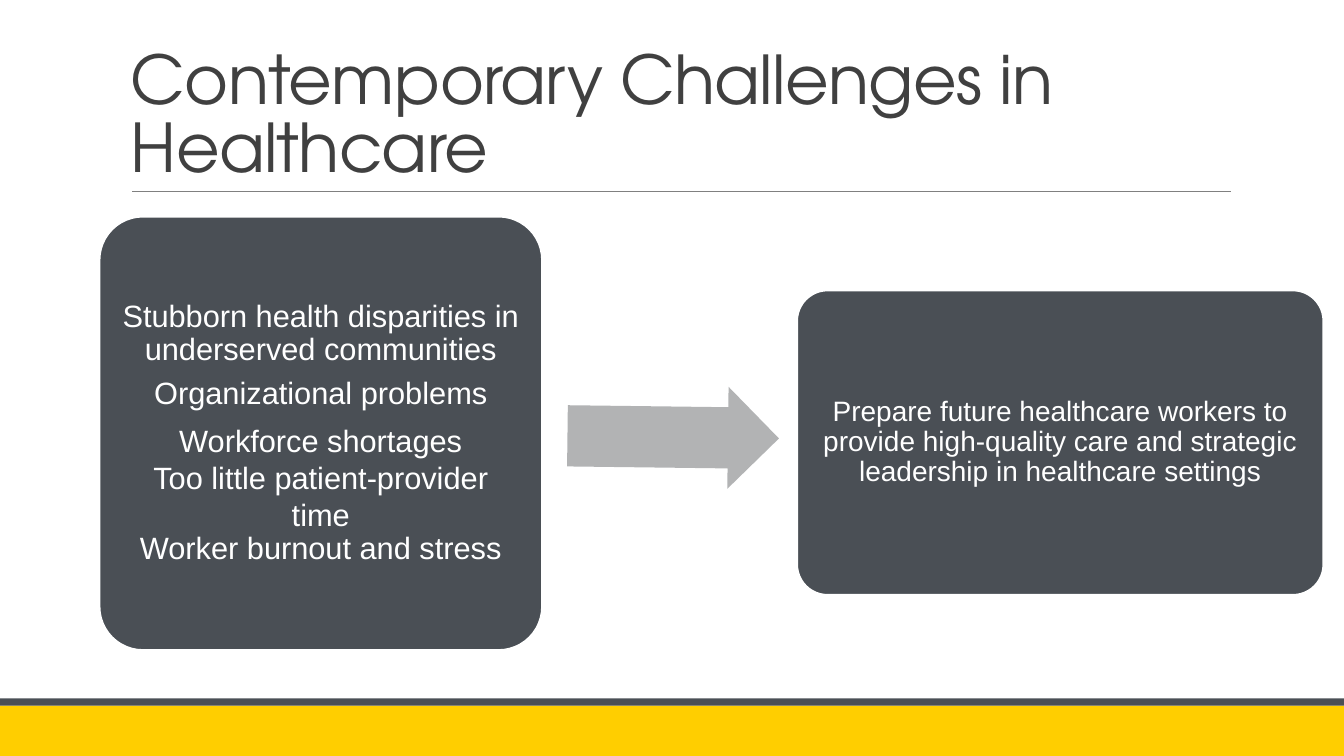
import pptx
import pptx.util
import pptx.dml.color
import pptx.enum.shapes
import pptx.enum.text
import pptx.oxml.ns
import lxml.etree

Cm = pptx.util.Cm
Pt = pptx.util.Pt
SHAPE = pptx.enum.shapes.MSO_SHAPE
ANCHOR = pptx.enum.text.MSO_ANCHOR
ALIGN = pptx.enum.text.PP_ALIGN

SLATE = "4A4F55"
WHITE = "FFFFFF"
CHALLENGES = [
    ("Stubborn health disparities in underserved communities", True),
    ("Organizational problems", True),
    ("Workforce shortages", False),
    ("Too little patient-provider time", False),
    ("Worker burnout and stress", True),
]
RESPONSE = [
    ("Prepare future healthcare workers to provide high-quality care "
     "and strategic leadership in healthcare settings", True),
]


def color(value):
    return pptx.dml.color.RGBColor.from_string(value)


def set_font(paragraph, name, size, value):
    paragraph.font.name = name
    paragraph.font.size = Pt(size)
    paragraph.font.color.rgb = color(value)


def add_block(slide, kind, left, top, width, height, fill):
    shape = slide.shapes.add_shape(kind, Cm(left), Cm(top), Cm(width), Cm(height))
    shape.shadow.inherit = False
    shape.fill.solid()
    shape.fill.fore_color.rgb = color(fill)
    shape.line.fill.background()
    return shape


def add_rule(slide, left, right, top):
    rule = slide.shapes.add_connector(
        pptx.enum.shapes.MSO_CONNECTOR.STRAIGHT, Cm(left), Cm(top), Cm(right), Cm(top))
    rule.line.color.rgb = color("808080")
    rule.line.width = Pt(0.5)
    lxml.etree.SubElement(rule._element.spPr, pptx.oxml.ns.qn("a:effectLst"))


def add_title(slide, text):
    title = slide.shapes.add_textbox(Cm(3.05), Cm(0.79), Cm(27.94), Cm(4.04))
    frame = title.text_frame
    frame.word_wrap = True
    frame.vertical_anchor = ANCHOR.BOTTOM
    paragraph = frame.paragraphs[0]
    paragraph.line_spacing = 0.85
    run = paragraph.add_run()
    run.text = text
    set_font(paragraph, "TeX Gyre Adventor", 48, "404040")
    run.font._element.set("spc", "-50")


def add_card(slide, left, top, width, height, size, inset, lines):
    card = add_block(slide, SHAPE.ROUNDED_RECTANGLE, left, top, width, height, SLATE)
    card.adjustments[0] = 0.1
    card.line.color.rgb = color(WHITE)
    card.line.width = Pt(1.25)
    frame = card.text_frame
    frame.word_wrap = True
    frame.vertical_anchor = ANCHOR.MIDDLE
    frame.margin_left = frame.margin_right = Cm(inset)
    frame.margin_top = frame.margin_bottom = Cm(inset)
    for index, (text, spaced) in enumerate(lines):
        paragraph = frame.add_paragraph() if index else frame.paragraphs[0]
        paragraph.text = text
        paragraph.alignment = ALIGN.CENTER
        set_font(paragraph, "Arial", size, WHITE)
        if spaced:
            paragraph.line_spacing = 0.9
            paragraph.space_after = Pt(size * 0.35)


def add_arrow(slide):
    arrow = add_block(slide, SHAPE.RIGHT_ARROW, 14.3, 9.73, 5.33, 2.57, "B2B3B4")
    arrow.adjustments[0] = 0.6
    arrow.adjustments[1] = 0.5
    arrow.rotation = 0.7


def main():
    presentation = pptx.Presentation()
    presentation.slide_width = Cm(33.87)
    presentation.slide_height = Cm(19.05)
    slide = presentation.slides.add_slide(presentation.slide_layouts[6])
    add_block(slide, SHAPE.RECTANGLE, 0, 17.78, 33.87, 1.27, "FFCE00")
    add_block(slide, SHAPE.RECTANGLE, 0, 17.6, 33.87, 0.18, SLATE)
    add_rule(slide, 3.33, 31.01, 4.83)
    add_title(slide, "Contemporary Challenges in Healthcare")
    add_card(slide, 2.51, 5.46, 11.15, 10.92, 22, 0.23, CHALLENGES)
    add_arrow(slide)
    add_card(slide, 20.09, 7.32, 13.26, 7.67, 20, 0.2, RESPONSE)
    presentation.save("out.pptx")


if __name__ == "__main__":
    main()
